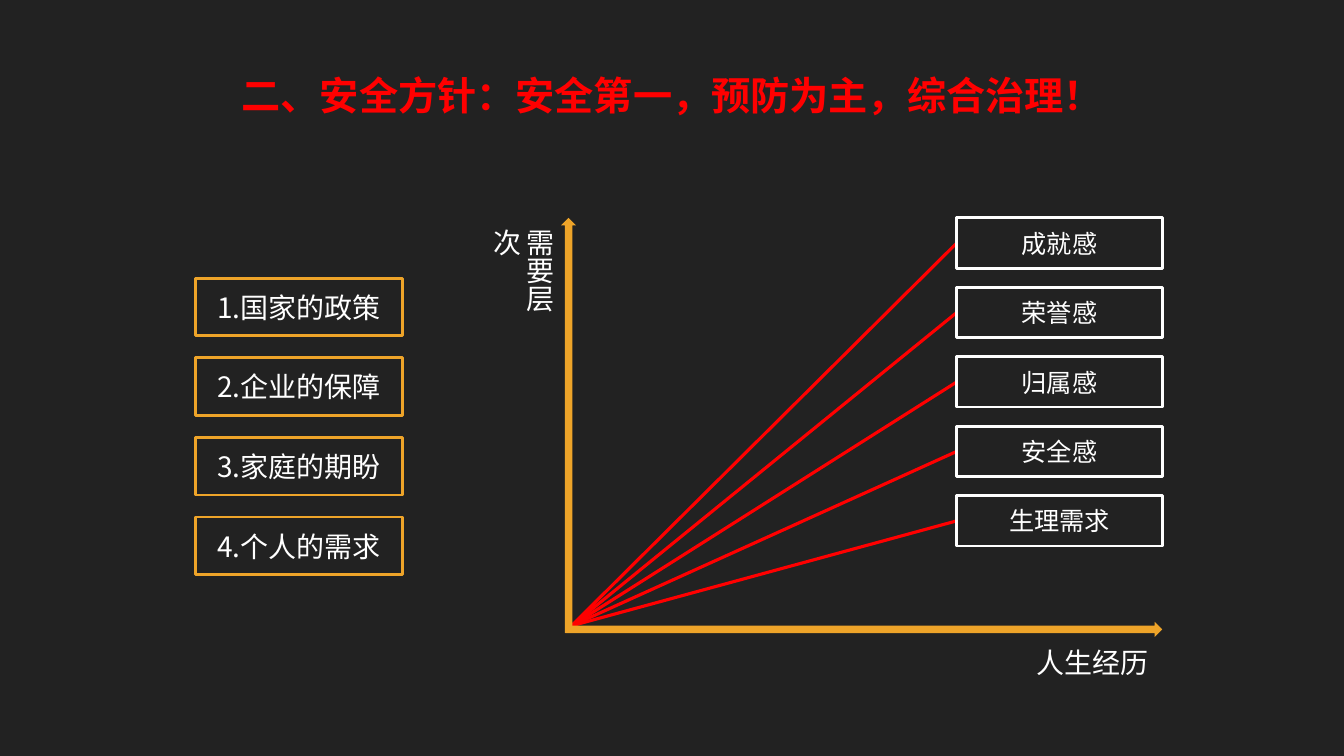
import pptx
import pptx.util
import pptx.dml.color
import pptx.enum.shapes
import pptx.enum.text
import pptx.oxml.ns
import lxml.etree

Cm = pptx.util.Cm
Pt = pptx.util.Pt
SHAPE = pptx.enum.shapes.MSO_SHAPE
ALIGN = pptx.enum.text.PP_ALIGN
ANCHOR = pptx.enum.text.MSO_ANCHOR
qn = pptx.oxml.ns.qn

FONT = "Noto Sans CJK SC"
COLORS = {"background": "222222", "red": "FF0000", "amber": "EEA429", "white": "FFFFFF"}
REASONS = ["1.国家的政策", "2.企业的保障", "3.家庭的期盼", "4.个人的需求"]
NEEDS = ["成就感", "荣誉感", "归属感", "安全感", "生理需求"]


def rgb(color):
    return pptx.dml.color.RGBColor.from_string(COLORS[color])


def write(frame, text, size, color="white", bold=False, align=ALIGN.CENTER, anchor=ANCHOR.MIDDLE):
    frame.text = text
    frame.word_wrap = True
    frame.vertical_anchor = anchor
    paragraph = frame.paragraphs[0]
    paragraph.alignment = align
    font = paragraph.runs[0].font
    font.name, font.size, font.bold = FONT, Pt(size), bold
    font.color.rgb = rgb(color)
    east_asian = lxml.etree.Element(qn("a:ea"), typeface=FONT)
    paragraph.runs[0]._r.rPr.find(qn("a:latin")).addnext(east_asian)


def add_title(slide, left, top, width, height):
    title = slide.shapes.title
    title.left, title.top, title.width, title.height = Cm(left), Cm(top), Cm(width), Cm(height)
    write(title.text_frame, "二、安全方针：安全第一，预防为主，综合治理！", 28, "red", bold=True)


def add_frame(slide, left, top, width, height, text, size, color):
    frame = slide.shapes.add_shape(SHAPE.RECTANGLE, Cm(left), Cm(top), Cm(width), Cm(height))
    frame.shadow.inherit = False
    frame.fill.background()
    frame.line.color.rgb = rgb(color)
    frame.line.width = Pt(2)
    write(frame.text_frame, text, size)
    return frame


def add_reasons(slide, left, top, width, height):
    reason_height = 1.45
    pitch = (height - reason_height) / (len(REASONS) - 1)
    for row, reason in enumerate(REASONS):
        add_frame(slide, left, top + row * pitch, width, reason_height, reason, 20, "amber")


def add_axis(slide, left, top, length, rotation=0):
    axis = slide.shapes.add_shape(SHAPE.RIGHT_ARROW, Cm(left), Cm(top), Cm(length), Cm(0.38))
    axis.rotation = rotation
    axis.shadow.inherit = False
    axis.fill.solid()
    axis.fill.fore_color.rgb = rgb("amber")
    axis.line.fill.background()


def add_axis_label(slide, left, top, width, height, text, align, vertical=False):
    label = slide.shapes.add_textbox(Cm(left), Cm(top), Cm(width), Cm(height))
    write(label.text_frame, text, 20, align=align, anchor=ANCHOR.TOP)
    label.text_frame.auto_size = pptx.enum.text.MSO_AUTO_SIZE.SHAPE_TO_FIT_TEXT
    if vertical:
        label.text_frame._txBody.bodyPr.set("vert", "eaVert")


def add_ray(slide, origin_x, origin_y):
    ray = slide.shapes.add_connector(
        pptx.enum.shapes.MSO_CONNECTOR.STRAIGHT,
        Cm(origin_x), Cm(origin_y), Cm(origin_x), Cm(origin_y))
    ray.line.color.rgb = rgb("red")
    ray.line.width = Pt(2.25)
    lxml.etree.SubElement(ray._element.spPr, qn("a:effectLst"))
    return ray


def add_needs_chart(slide, left, top, width, height):
    right, bottom = left + width, top + height
    need_width, need_height, pitch = 5.18, 1.27, 1.75
    rays = [add_ray(slide, left + 0.15, bottom - 0.28) for need in NEEDS]
    add_axis(slide, left, bottom - 0.38, width)
    rise = height - 0.1
    add_axis(slide, left + 0.08 - rise / 2, top + rise / 2 - 0.19, rise, rotation=270)
    add_axis_label(slide, left - 1.47, top + 0.02, 1.37, 3.18, "需要层次", ALIGN.LEFT, vertical=True)
    add_axis_label(slide, right - 3.5, bottom + 0.08, 3.48, 1.12, "人生经历", ALIGN.CENTER)
    for row, (need, ray) in enumerate(zip(NEEDS, rays)):
        need_frame = add_frame(slide, right - need_width, top + row * pitch,
                               need_width, need_height, need, 18, "white")
        ray.begin_connect(need_frame, 1)


def main():
    deck = pptx.Presentation()
    deck.slide_width, deck.slide_height = Cm(33.87), Cm(19.05)
    slide = deck.slides.add_slide(deck.slide_layouts[5])
    slide.background.fill.solid()
    slide.background.fill.fore_color.rgb = rgb("background")
    add_title(slide, 5.18, 1.75, 23.52, 1.27)
    add_reasons(slide, 4.93, 7.01, 5.21, 7.47)
    add_needs_chart(slide, 14.25, 5.49, 15.04, 10.56)
    deck.save("out.pptx")


if __name__ == "__main__":
    main()
